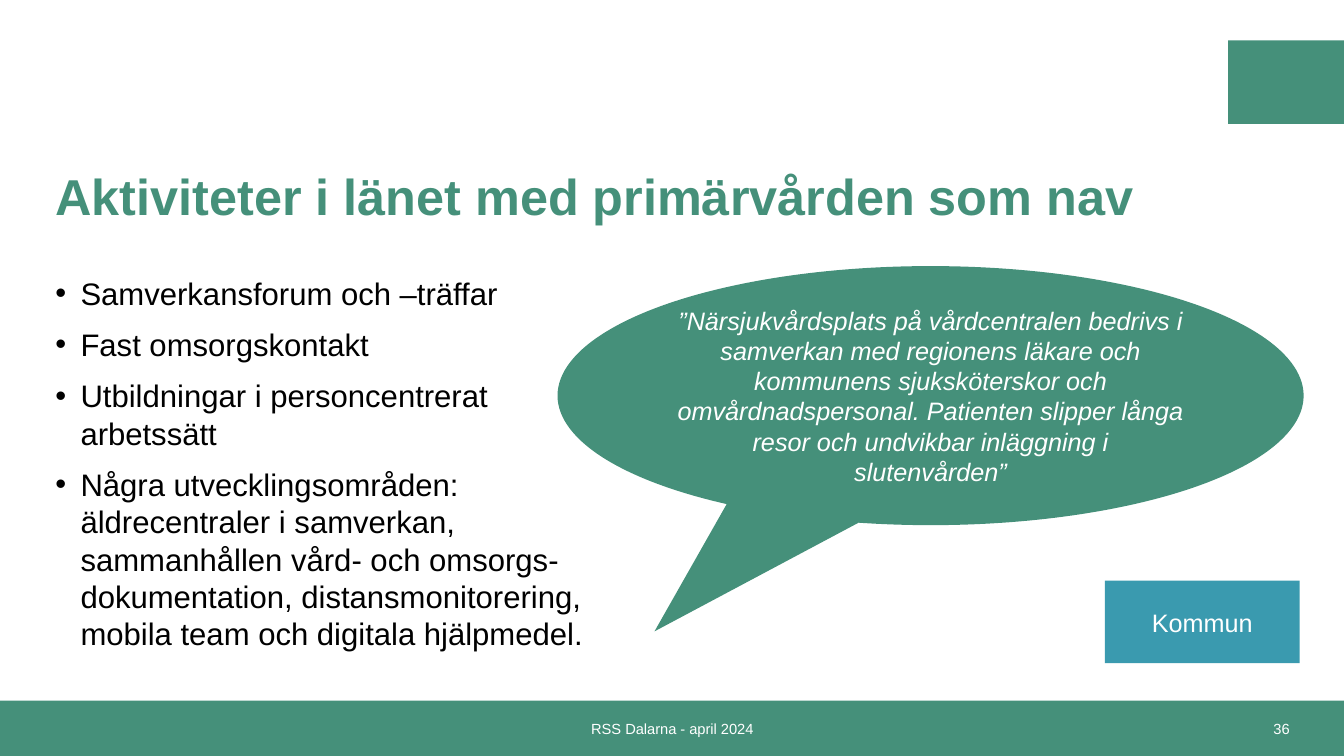
from dataclasses import dataclass

from lxml.etree import SubElement
from pptx import Presentation
from pptx.dml.color import RGBColor
from pptx.enum.shapes import MSO_SHAPE
from pptx.enum.text import MSO_ANCHOR, PP_ALIGN
from pptx.oxml.ns import qn
from pptx.shapes.autoshape import Shape
from pptx.slide import Slide
from pptx.text.text import TextFrame
from pptx.util import Inches, Pt

GREEN = "45907A"
BLUE = "3A9AAF"
WHITE = "FFFFFF"
BLACK = "000000"
FONT = "Arial"

ACTIVITIES = [
    "Samverkansforum och –träffar",
    "Fast omsorgskontakt",
    "Utbildningar i personcentrerat arbetssätt",
    "Några utvecklingsområden: äldrecentraler i samverkan, sammanhållen vård- och "
    "omsorgs-dokumentation, distansmonitorering, mobila team och digitala hjälpmedel.",
]
QUOTE = (
    "”Närsjukvårdsplats på vårdcentralen bedrivs i samverkan med regionens läkare och "
    "kommunens sjuksköterskor och omvårdnadspersonal. Patienten slipper långa resor och "
    "undvikbar inläggning i slutenvården”"
)


@dataclass(frozen=True)
class Box:
    left: float
    top: float
    width: float
    height: float

    def lengths(self) -> tuple[Inches, Inches, Inches, Inches]:
        return Inches(self.left), Inches(self.top), Inches(self.width), Inches(self.height)


@dataclass(frozen=True)
class TextStyle:
    size: float
    color: str = WHITE
    bold: bool = False
    italic: bool = False
    alignment: PP_ALIGN = PP_ALIGN.CENTER


@dataclass(frozen=True)
class Panel:
    kind: MSO_SHAPE
    box: Box
    color: str
    text: str = ""
    italic: bool = False
    adjustments: tuple[float, ...] = ()


@dataclass(frozen=True)
class FooterText:
    box: Box
    text: str
    alignment: PP_ALIGN


PANELS = [
    Panel(MSO_SHAPE.RECTANGLE, Box(12.18, 0.4, 1.15, 0.83), GREEN),
    Panel(MSO_SHAPE.RECTANGLE, Box(0, 6.95, 13.33, 0.55), GREEN),
    Panel(MSO_SHAPE.OVAL_CALLOUT, Box(5.53, 2.64, 7.4, 2.57), GREEN, QUOTE, True, (-0.37, 0.91)),
    Panel(MSO_SHAPE.RECTANGLE, Box(10.96, 5.76, 1.93, 0.82), BLUE, "Kommun"),
]
FOOTER_TEXTS = [
    FooterText(Box(4.42, 6.95, 4.5, 0.55), "RSS Dalarna - april 2024", PP_ALIGN.CENTER),
    FooterText(Box(9.42, 6.95, 3.47, 0.55), "36", PP_ALIGN.RIGHT),
]


def rgb(color: str) -> RGBColor:
    return RGBColor.from_string(color)


def style_text(text_frame: TextFrame, style: TextStyle) -> None:
    text_frame.word_wrap = True
    for paragraph in text_frame.paragraphs:
        paragraph.alignment = style.alignment
        for run in paragraph.runs:
            run.font.name = FONT
            run.font.size = Pt(style.size)
            run.font.bold = style.bold
            run.font.italic = style.italic
            run.font.color.rgb = rgb(style.color)


def add_panel(slide: Slide, panel: Panel) -> Shape:
    shape = slide.shapes.add_shape(panel.kind, *panel.box.lengths())
    shape.shadow.inherit = False
    shape.fill.solid()
    shape.fill.fore_color.rgb = rgb(panel.color)
    shape.line.fill.background()
    for index, value in enumerate(panel.adjustments):
        shape.adjustments[index] = value
    if panel.text:
        shape.text_frame.text = panel.text
        shape.text_frame.vertical_anchor = MSO_ANCHOR.MIDDLE
        style_text(shape.text_frame, TextStyle(18, italic=panel.italic))
    return shape


def add_footer_text(slide: Slide, footer: FooterText) -> None:
    text_frame = slide.shapes.add_textbox(*footer.box.lengths()).text_frame
    text_frame.text = footer.text
    text_frame.vertical_anchor = MSO_ANCHOR.MIDDLE
    style_text(text_frame, TextStyle(10.5, alignment=footer.alignment))


def set_title(slide: Slide, text: str) -> None:
    title = slide.shapes.title
    title.left, title.top, title.width, title.height = Box(0.45, 1.32, 11.39, 1.32).lengths()
    title.text_frame.text = text
    title.text_frame.vertical_anchor = MSO_ANCHOR.MIDDLE
    title.text_frame.paragraphs[0].line_spacing = 0.9
    style_text(title.text_frame, TextStyle(36, GREEN, bold=True, alignment=PP_ALIGN.LEFT))


def add_activities(slide: Slide) -> None:
    text_frame = slide.shapes.add_textbox(*Box(0.45, 2.67, 5.48, 3.91).lengths()).text_frame
    text_frame.text = "\n".join(ACTIVITIES)
    for index, paragraph in enumerate(text_frame.paragraphs):
        properties = paragraph._p.get_or_add_pPr()
        properties.set("marL", str(Inches(0.25)))
        properties.set("indent", str(Inches(-0.25)))
        SubElement(properties, qn("a:buFont"), typeface=FONT)
        SubElement(properties, qn("a:buChar"), char="•")
        if index:
            paragraph.space_before = Pt(10)
    style_text(text_frame, TextStyle(22.2, BLACK, alignment=PP_ALIGN.LEFT))


def main() -> None:
    presentation = Presentation()
    presentation.slide_width = Inches(13.33)
    presentation.slide_height = Inches(7.5)
    slide = presentation.slides.add_slide(presentation.slide_layouts[5])
    set_title(slide, "Aktiviteter i länet med primärvården som nav")
    add_activities(slide)
    for panel in PANELS:
        add_panel(slide, panel)
    for footer in FOOTER_TEXTS:
        add_footer_text(slide, footer)
    presentation.save("out.pptx")


if __name__ == "__main__":
    main()
